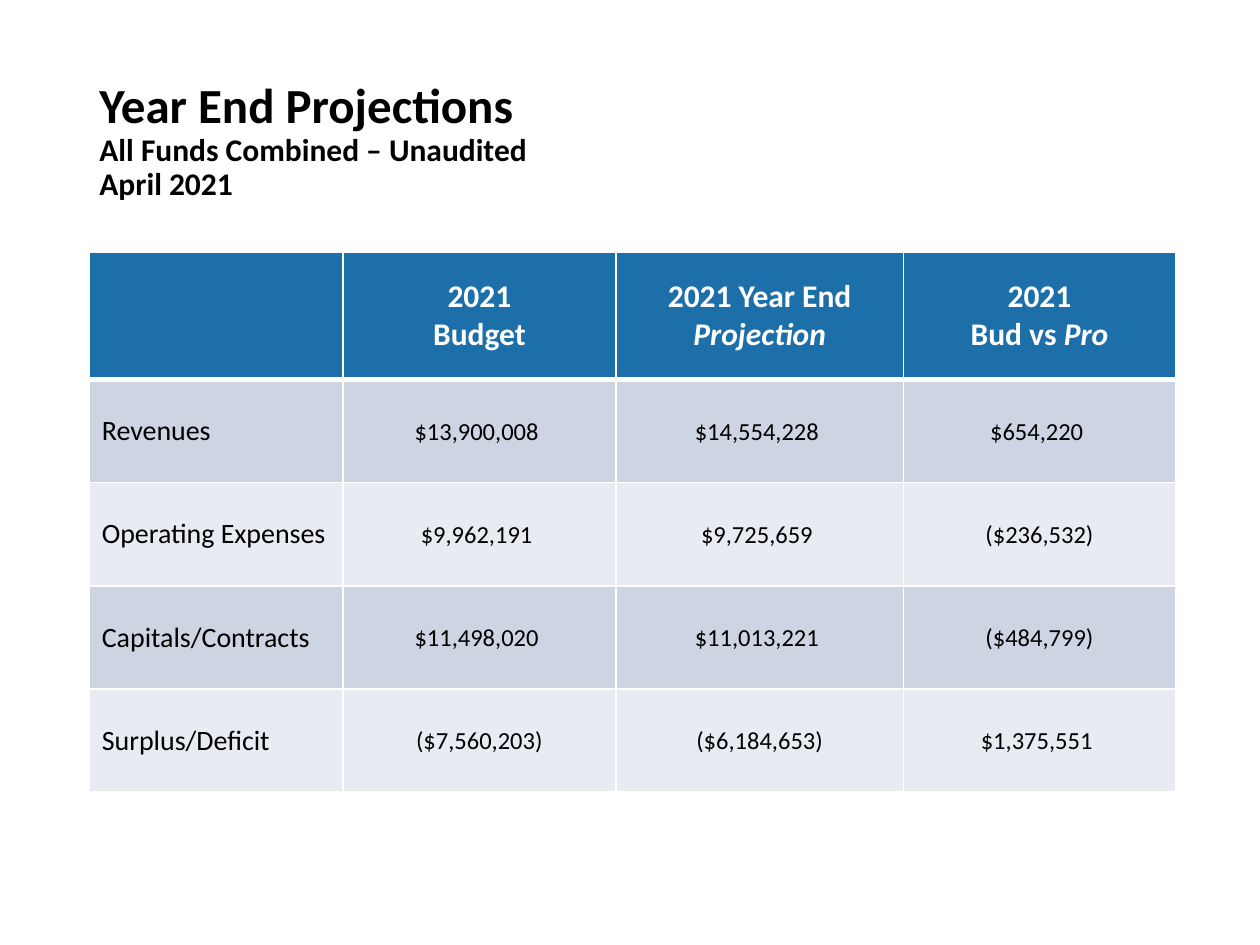
from lxml.etree import SubElement
from pptx import Presentation
from pptx.dml.color import RGBColor
from pptx.enum.text import MSO_ANCHOR, MSO_AUTO_SIZE, PP_ALIGN
from pptx.oxml.ns import qn
from pptx.util import Cm, Pt

HEADS = [
    [],
    [[("2021", False)], [("Budget", False)]],
    [[("2021 Year End", False)], [("Projection", True)]],
    [[("2021", False)], [("Bud vs ", False), ("Pro", True)]],
]
ROWS = [
    ("Revenues", "$13,900,008 ", "$14,554,228 ", "$654,220 "),
    ("Operating Expenses", "$9,962,191 ", "$9,725,659 ", "($236,532)"),
    ("Capitals/Contracts", "$11,498,020 ", "$11,013,221 ", "($484,799)"),
    ("Surplus/Deficit", "($7,560,203)", "($6,184,653)", "$1,375,551 "),
]
WIDTHS = [5.11, 5.51, 5.79, 5.49]
HEAD, ROW = 2.57, 2.08


def paint(code):
    return RGBColor.from_string(code)


def write(para, text, size=14, color="000000", bold=False, slant=False, align=PP_ALIGN.CENTER):
    para.alignment = align
    for i, line in enumerate(text.split("\n")):
        if i:
            para.add_line_break()
        run = para.add_run()
        run.text = line
        font = run.font
        font.name, font.size = "Calibri", Pt(size)
        font.bold, font.italic = bold, slant
        font.color.rgb = paint(color)


class Deck:
    """Holds the table style and the current slide."""

    blue, bands, edge = "1D6FA9", ("CDD5E2", "E8EBF1"), "FFFFFF"

    def __init__(self):
        self.show = Presentation()
        self.show.slide_width, self.show.slide_height = Cm(25.4), Cm(19.05)
        self.slide = self.show.slides.add_slide(self.show.slide_layouts[5])

    def title(self, main, sub, left, top, width, height):
        box = self.slide.shapes.title
        box.left, box.top, box.width, box.height = map(Cm, (left, top, width, height))
        frame = box.text_frame
        frame.word_wrap, frame.auto_size = True, MSO_AUTO_SIZE.NONE
        frame.vertical_anchor = MSO_ANCHOR.MIDDLE
        para = frame.paragraphs[0]
        para.line_spacing = 0.9
        write(para, main, size=28, bold=True, align=PP_ALIGN.LEFT)
        para.add_line_break()
        write(para, sub, size=18, bold=True, align=PP_ALIGN.LEFT)

    def cell(self, cell, fill, base=1):
        props = cell._tc.get_or_add_tcPr()
        for side, width in zip("LRTB", (1, 1, 1, base)):
            line = SubElement(props, qn(f"a:ln{side}"), w=str(Pt(width)))
            solid = SubElement(line, qn("a:solidFill"))
            SubElement(solid, qn("a:srgbClr"), val=self.edge)
        cell.fill.solid()
        cell.fill.fore_color.rgb = paint(fill)
        cell.vertical_anchor = MSO_ANCHOR.MIDDLE
        return cell

    def header(self, cell, lines):
        frame = self.cell(cell, self.blue, base=3).text_frame
        for i, line in enumerate(lines):
            para = frame.add_paragraph() if i else frame.paragraphs[0]
            for text, slant in line:
                write(para, text, size=18, color=self.edge, bold=True, slant=slant)

    def table(self, heads, rows, left, top):
        high = HEAD + ROW * len(rows)
        grid = self.slide.shapes.add_table(
            len(rows) + 1, len(heads), Cm(left), Cm(top), Cm(sum(WIDTHS)), Cm(high)
        ).table
        for col, width in zip(grid.columns, WIDTHS):
            col.width = Cm(width)
        for i, row in enumerate(grid.rows):
            row.height = Cm(ROW if i else HEAD)
        for c, lines in enumerate(heads):
            self.header(grid.cell(0, c), lines)
        for r, row in enumerate(rows):
            for c, text in enumerate(row):
                cell = self.cell(grid.cell(r + 1, c), self.bands[r % 2])
                para = cell.text_frame.paragraphs[0]
                if c:
                    cell.margin_left = cell.margin_right = cell.margin_top = Cm(0.03)
                    cell.margin_bottom = 0
                    write(para, text)
                else:
                    write(para, text, size=16, align=PP_ALIGN.LEFT)


def main():
    deck = Deck()
    deck.title("Year End Projections ", "All Funds Combined – Unaudited \nApril 2021", 1.75, 1.02, 21.9, 3.68)
    deck.table(HEADS, ROWS, 1.8, 5.08)
    deck.show.save("out.pptx")


if __name__ == "__main__":
    main()
